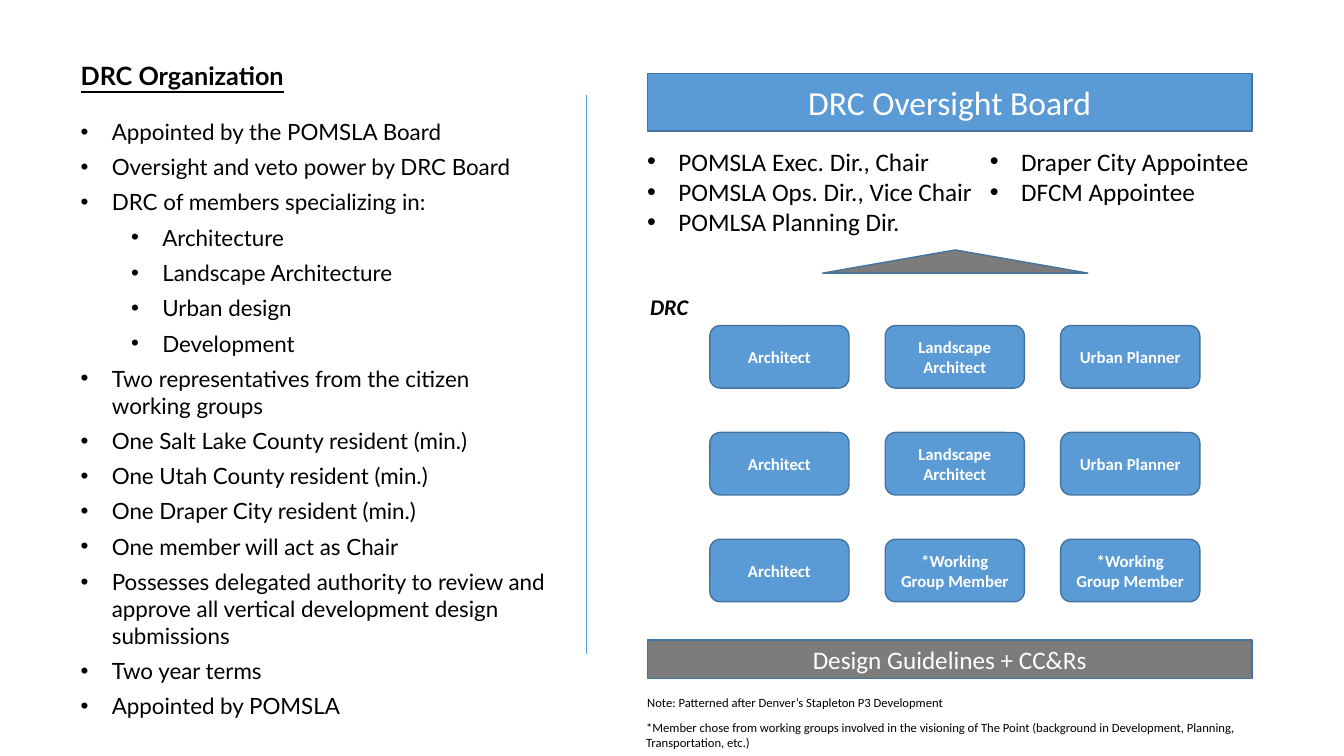
from dataclasses import dataclass, field

from lxml.etree import SubElement
from pptx import Presentation
from pptx.dml.color import RGBColor
from pptx.enum.shapes import MSO_CONNECTOR, MSO_SHAPE
from pptx.enum.text import MSO_ANCHOR, MSO_AUTO_SIZE, PP_ALIGN
from pptx.oxml.ns import qn
from pptx.util import Inches, Pt

BLUE, GRAY, OUTLINE = "5B9BD5", "7C7C7C", "43739E"
WHITE, BLACK = "FFFFFF", "000000"
BULLET_INDENT = 0.31
SUB_BULLET_INDENT = 0.81


@dataclass
class TextBlock:
    place: tuple[float, float, float, float]
    lines: list[str]
    style: dict
    bulleted: bool = False
    space_after: float = 0
    sub_lines: set[str] = field(default_factory=set)


@dataclass
class Block:
    kind: MSO_SHAPE
    place: tuple[float, float, float, float]
    fill: str
    text: str = ""
    size: float = 18
    bold: bool = False


def color(code: str) -> RGBColor:
    return RGBColor.from_string(code)


def format_span(span, style: dict) -> None:
    for name, value in style.items():
        if name == "color":
            span.font.color.rgb = color(value)
        else:
            setattr(span.font, name, value)


def text_style(size: float, shade: str = BLACK, name: str = "Calibri", **more) -> dict:
    return {"size": Pt(size), "color": shade, "name": name, **more}


def add_bullet(para, indent: float) -> None:
    properties = para._p.get_or_add_pPr()
    properties.set("marL", str(Inches(indent)))
    properties.set("indent", str(-Inches(BULLET_INDENT)))
    SubElement(properties, qn("a:buFont")).set("typeface", "Arial")
    SubElement(properties, qn("a:buChar")).set("char", "•")


def fill_text(box, block: TextBlock) -> None:
    box.left, box.top, box.width, box.height = map(Inches, block.place)
    frame = box.text_frame
    frame.word_wrap = True
    frame.auto_size = MSO_AUTO_SIZE.NONE
    frame.vertical_anchor = MSO_ANCHOR.TOP
    for index, line in enumerate(block.lines):
        para = frame.add_paragraph() if index else frame.paragraphs[0]
        is_sub = line in block.sub_lines
        settings = {"alignment": PP_ALIGN.LEFT, "space_before": Pt(0),
                    "space_after": Pt(block.space_after), "level": int(is_sub)}
        for name, value in settings.items():
            setattr(para, name, value)
        if block.bulleted:
            add_bullet(para, SUB_BULLET_INDENT if is_sub else BULLET_INDENT)
        span = para.add_run()
        span.text = line
        format_span(span, block.style)


def draw_block(page, block: Block) -> None:
    box = page.shapes.add_shape(block.kind, *map(Inches, block.place))
    box.shadow.inherit = False
    box.fill.solid()
    box.fill.fore_color.rgb = color(block.fill)
    box.line.color.rgb = color(OUTLINE)
    box.line.width = Pt(1)
    if block.text:
        box.text_frame.word_wrap = True
        box.text_frame.vertical_anchor = MSO_ANCHOR.MIDDLE
        para = box.text_frame.paragraphs[0]
        para.alignment = PP_ALIGN.CENTER
        span = para.add_run()
        span.text = block.text
        format_span(span, text_style(block.size, WHITE, bold=block.bold))


def draw_divider(page) -> None:
    divider = page.shapes.add_connector(
        MSO_CONNECTOR.STRAIGHT, Inches(5.82), Inches(0.94), Inches(5.82), Inches(6.49))
    divider.line.color.rgb = color(BLUE)
    divider.line.width = Pt(0.5)
    SubElement(divider._element.spPr, qn("a:effectLst"))


SPECIALTIES = ["Architecture", "Landscape Architecture", "Urban design", "Development"]
HEADING = TextBlock((0.7, 0.55, 4.86, 0.45), ["DRC Organization"],
                    text_style(18, name="Lato", bold=True, underline=True))
ORGANIZATION = TextBlock(
    (0.7, 1.12, 4.86, 6.2),
    ["Appointed by the POMSLA Board",
     "Oversight and veto power by DRC Board",
     "DRC of members specializing in:",
     *SPECIALTIES,
     "Two representatives from the citizen working groups",
     "One Salt Lake County resident (min.)",
     "One Utah County resident (min.)",
     "One Draper City resident (min.)",
     "One member will act as Chair",
     "Possesses delegated authority to review and approve all vertical "
     "development design submissions",
     "Two year terms",
     "Appointed by POMSLA"],
    text_style(16, name="Lato"), bulleted=True, space_after=6, sub_lines=set(SPECIALTIES))

TEXT_BOXES = [
    TextBlock((6.32, 1.4, 3.55, 1.01),
              ["POMSLA Exec. Dir., Chair", "POMSLA Ops. Dir., Vice Chair",
               "POMLSA Planning Dir."], text_style(18), bulleted=True),
    TextBlock((9.72, 1.4, 2.89, 1.01), ["Draper City Appointee", "DFCM Appointee"],
              text_style(18), bulleted=True),
    TextBlock((6.35, 2.86, 0.98, 0.37), ["DRC"], text_style(16, bold=True, italic=True)),
    TextBlock((6.32, 6.84, 6.75, 0.25),
              ["Note: Patterned after Denver’s Stapleton P3 Development"], text_style(9)),
    TextBlock((6.31, 7.09, 6.65, 0.4),
              ["*Member chose from working groups involved in the visioning of The Point "
               "(background in Development, Planning, Transportation, etc.)"], text_style(9)),
]

BLOCKS = [
    Block(MSO_SHAPE.RECTANGLE, (6.42, 0.73, 6, 0.57), BLUE, "DRC Oversight Board", 24),
    Block(MSO_SHAPE.ISOSCELES_TRIANGLE, (8.16, 2.48, 2.63, 0.23), GRAY),
    Block(MSO_SHAPE.RECTANGLE, (6.42, 6.35, 6, 0.38), GRAY, "Design Guidelines + CC&Rs"),
]

MEMBERS = [
    ["Architect", "Landscape Architect", "Urban Planner"],
    ["Architect", "Landscape Architect", "Urban Planner"],
    ["Architect", "*Working Group Member", "*Working Group Member"],
]
MEMBER_LEFT, MEMBER_TOP = 7.04, 3.23
COLUMN_STEP, ROW_STEP = 1.74, 1.06


def main() -> None:
    deck = Presentation()
    deck.slide_width, deck.slide_height = Inches(13.33), Inches(7.5)
    page = deck.slides.add_slide(deck.slide_layouts[1])

    # Left side: heading and list
    fill_text(page.shapes.title, HEADING)
    fill_text(page.placeholders[1], ORGANIZATION)
    draw_divider(page)

    # Right side: board, arrow, guidelines and captions
    for block in BLOCKS:
        draw_block(page, block)
    for text_block in TEXT_BOXES:
        fill_text(page.shapes.add_textbox(*map(Inches, text_block.place)), text_block)

    # Committee member grid
    for row, members in enumerate(MEMBERS):
        for column, member in enumerate(members):
            place = (MEMBER_LEFT + column * COLUMN_STEP, MEMBER_TOP + row * ROW_STEP, 1.38, 0.62)
            draw_block(page, Block(MSO_SHAPE.ROUNDED_RECTANGLE, place, BLUE, member, 12, True))

    deck.save("out.pptx")


if __name__ == "__main__":
    main()
